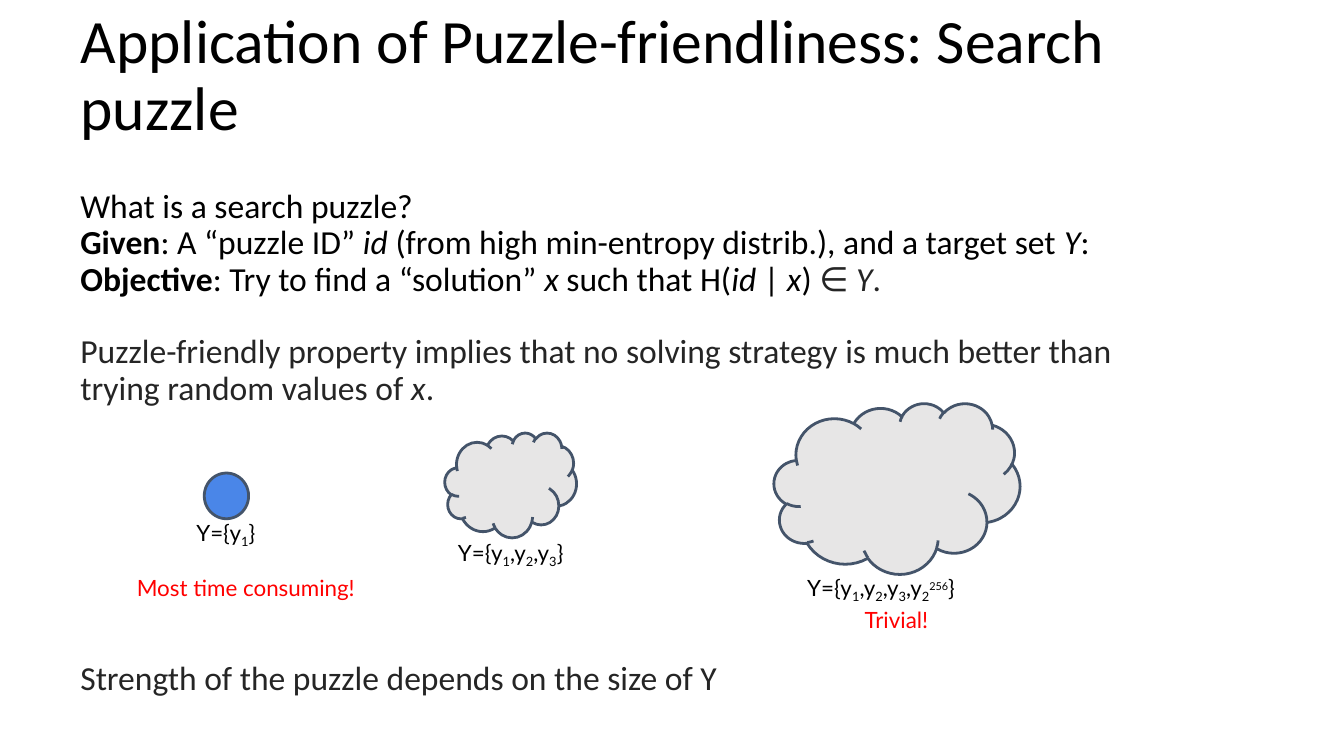
from typing import NamedTuple

from pptx import Presentation
from pptx.dml.color import RGBColor
from pptx.enum.shapes import MSO_SHAPE
from pptx.enum.text import MSO_ANCHOR, MSO_AUTO_SIZE, PP_ALIGN
from pptx.util import Inches, Pt

BLACK = RGBColor(0x00, 0x00, 0x00)
CHARCOAL = RGBColor(0x25, 0x25, 0x25)
RED = RGBColor(0xFF, 0x00, 0x00)
BLUE = RGBColor(0x4A, 0x86, 0xE8)
GREY = RGBColor(0xE7, 0xE6, 0xE6)
SLATE = RGBColor(0x44, 0x54, 0x6A)


class Box(NamedTuple):
    left: float
    top: float
    width: float
    height: float

    def lengths(self) -> list:
        return [Inches(v) for v in self]


class Run(NamedTuple):
    text: str
    style: dict = {}
    baseline: int = 0
    color: RGBColor | None = None


class Para(NamedTuple):
    runs: list[Run]
    color: RGBColor = BLACK
    space_before: float = 0


class TargetSet(NamedTuple):
    kind: MSO_SHAPE
    fill: RGBColor
    box: Box
    label_box: Box
    label: list[Run]


TITLE = {"name": "Calibri", "size": Pt(33)}
BODY = {"name": "Calibri", "size": Pt(18)}
LABEL = {"name": "Lato", "size": Pt(12)}
BOLD = {"bold": True}
ITALIC = {"italic": True}


def add_runs(p, runs: list[Run], font: dict, color: RGBColor) -> None:
    for run in runs:
        r = p.add_run()
        r.text = run.text
        for name, value in {**font, **run.style}.items():
            setattr(r.font, name, value)
        r.font.color.rgb = run.color or color
        if run.baseline:
            r._r.get_or_add_rPr().set("baseline", str(run.baseline * 1000))


def prepare_frame(tf, anchor: MSO_ANCHOR = MSO_ANCHOR.TOP) -> None:
    settings = {"word_wrap": True, "auto_size": MSO_AUTO_SIZE.NONE, "vertical_anchor": anchor}
    settings |= {f"margin_{side}": Inches(0.1) for side in ("left", "top", "right", "bottom")}
    for name, value in settings.items():
        setattr(tf, name, value)


def add_label(s, box: Box, runs: list[Run], color: RGBColor = BLACK) -> None:
    tf = s.shapes.add_textbox(*box.lengths()).text_frame
    prepare_frame(tf)
    p = tf.paragraphs[0]
    p.alignment = PP_ALIGN.CENTER
    add_runs(p, runs, LABEL, color)


def add_target_set(s, item: TargetSet) -> None:
    sp = s.shapes.add_shape(item.kind, *item.box.lengths())
    sp.shadow.inherit = False
    sp.fill.solid()
    sp.fill.fore_color.rgb = item.fill
    sp.line.color.rgb = SLATE
    sp.line.width = Pt(1.5)
    add_label(s, item.label_box, item.label)


def set_of(*indices: str, exponent: str = "") -> list[Run]:
    """Runs for Y={y1,y2,...}, with an optional power on the last index."""
    runs = []
    for i, index in enumerate(indices):
        runs += [Run(",y" if i else "Y={y"), Run(index, baseline=-25)]
    if exponent:
        runs.append(Run(exponent, {"size": Pt(10)}, 30))
    return runs + [Run("}")]


PARAGRAPHS = [
    Para([Run("What is a search puzzle?")]),
    Para([Run("Given", BOLD), Run(": A “puzzle ID” "), Run("id", ITALIC),
          Run(" (from high min-entropy distrib.), and a target set "),
          Run("Y", ITALIC), Run(":")]),
    Para([Run("Objective", BOLD), Run(": Try to find a “solution” "), Run("x", ITALIC),
          Run(" such that H("), Run("id", ITALIC), Run(" | "), Run("x", ITALIC), Run(") "),
          Run("∈ ", color=CHARCOAL), Run("Y", ITALIC, color=CHARCOAL),
          Run(".", color=CHARCOAL)]),
    Para([Run("Puzzle-friendly property implies that no solving strategy is much better than")],
         CHARCOAL, 19.5),
    Para([Run("trying random values of "), Run("x", ITALIC), Run(".")], CHARCOAL),
    Para([Run("Strength of the puzzle depends on the size of Y")], CHARCOAL, 136),
]

TARGET_SETS = [
    TargetSet(MSO_SHAPE.CLOUD, GREY, Box(5.76, 3, 1.83, 1.27),
              Box(5.65, 4.17, 1.81, 0.51), set_of("1", "2", "3", "2", exponent="256")),
    TargetSet(MSO_SHAPE.CLOUD, GREY, Box(3.31, 3.22, 0.98, 0.78),
              Box(3.15, 3.91, 1.3, 0.51), set_of("1", "2", "3")),
    TargetSet(MSO_SHAPE.OVAL, BLUE, Box(1.52, 3.52, 0.33, 0.34),
              Box(1.32, 3.76, 0.72, 0.51), set_of("1")),
]

REMARKS = {
    "Most time consuming!": Box(0.72, 4.17, 2.22, 0.51),
    "Trivial!": Box(5.56, 4.41, 2.22, 0.51),
}


def main() -> None:
    # Widescreen 16:9 slide
    prs = Presentation()
    prs.slide_width, prs.slide_height = Inches(10), Inches(10 * 9 / 16)
    s = prs.slides.add_slide(prs.slide_layouts[5])

    # Title
    title = s.shapes.title
    title.left, title.top, title.width, title.height = Box(0.5, 0.23, 9, 0.94).lengths()
    prepare_frame(title.text_frame, MSO_ANCHOR.BOTTOM)
    p = title.text_frame.paragraphs[0]
    p.alignment = PP_ALIGN.LEFT
    p.line_spacing = 0.9
    add_runs(p, [Run("Application of Puzzle-friendliness: Search puzzle")], TITLE, BLACK)

    # Explanation
    tf = s.shapes.add_textbox(*Box(0.5, 1.31, 9, 4.07).lengths()).text_frame
    prepare_frame(tf)
    for i, para in enumerate(PARAGRAPHS):
        p = tf.add_paragraph() if i else tf.paragraphs[0]
        p.line_spacing = 0.9
        if para.space_before:
            p.space_before = Pt(para.space_before)
        add_runs(p, para.runs, BODY, para.color)

    # Target sets of growing size, with their remarks
    for item in TARGET_SETS:
        add_target_set(s, item)
    for text, box in REMARKS.items():
        add_label(s, box, [Run(text)], RED)

    prs.save("out.pptx")


if __name__ == "__main__":
    main()
